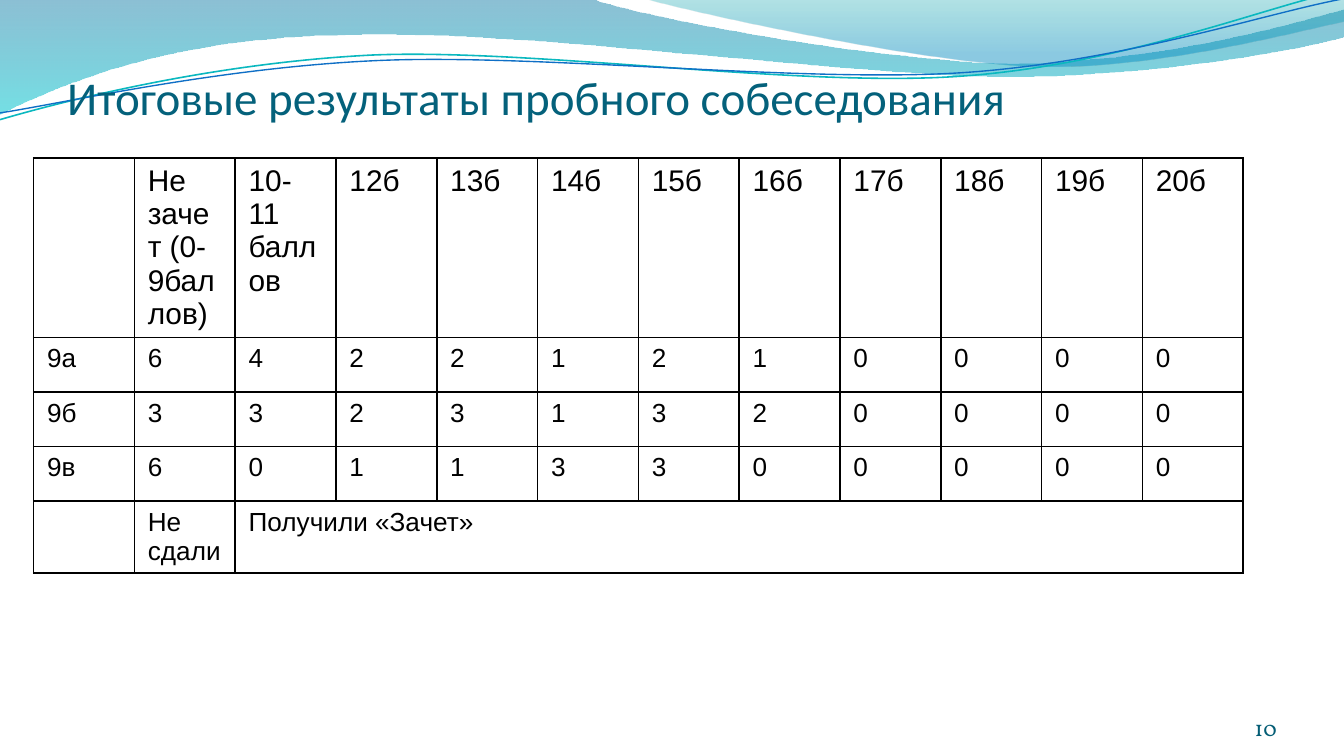
from lxml.etree import SubElement
from pptx import Presentation
from pptx.dml.color import RGBColor
from pptx.enum.text import MSO_ANCHOR as ANCHOR, MSO_AUTO_SIZE as AUTO, PP_ALIGN as ALIGN
from pptx.oxml import parse_xml
from pptx.oxml.ns import nsdecls, qn
from pptx.util import Pt

HEADER = ["", "Не зачет (0-9баллов)", "10-11 баллов"] + [f"{n}б" for n in range(12, 21)]
RESULTS = [
    ["9а", 6, 4, 2, 2, 1, 2, 1, 0, 0, 0, 0],
    ["9б", 3, 3, 2, 3, 1, 3, 2, 0, 0, 0, 0],
    ["9в", 6, 0, 1, 1, 3, 3, 0, 0, 0, 0, 0],
]
FOOTER = ["", "Не сдали", "Получили «Зачет»"] + [""] * 9

# Outlines: a start point, then line ends (x, y) or Bezier curves (two controls, end)
WIDE_WAVE = [
    (0, 0), (316.8, -0.7),
    (342.7, 9.4, 478.1, 33.8, 545.8, 33.8), (614.2, 33.8, 689.8, 13.7, 720, 5),
    (720.7, 19.4),
    (707.8, 23.8, 626.4, 41, 537.1, 41), (447.8, 40.3, 275, 15.1, 185, 18.7),
    (92.9, 19.4, 33.1, 44.6, -0.7, 61.2),
]
RIGHT_WAVE = [
    (344.9, -0.7),
    (366.5, 5.8, 491, 33.1, 553.7, 35.3), (616.3, 37.4, 691.9, 17.3, 720, 11.5),
    (720, 0),
]
TEAL_LINE = [
    (0, 64.1),
    (34.6, 54, 113.8, 33.8, 199.4, 29.5), (285.1, 25.9, 426.2, 46.8, 512.6, 41),
    (599.8, 35.3, 676.1, 4.3, 718.6, -5),
]
BLUE_LINE = [
    (0, 60.5),
    (33.8, 55.4, 118.1, 36, 203.8, 32.4), (290.2, 28.8, 429.8, 44.6, 516.2, 38.9),
    (601.9, 33.1, 677.5, 7.2, 720, -0.7),
]


def rgb(color):
    return RGBColor.from_string(color)


def add_curve(slide, outline, close):
    """Freeform through the segment ends, bent into Bezier curves."""
    ends = [(Pt(seg[-2]), Pt(seg[-1])) for seg in outline]
    builder = slide.shapes.build_freeform(*ends[0])
    builder.add_line_segments(ends[1:], close=close)
    sp = builder.convert_to_shape()
    sp.shadow.inherit = False
    lines = list(sp._element.spPr.iter(qn("a:lnTo")))
    for line, seg in zip(lines, outline[1:]):
        if len(seg) == 2:
            continue
        line.tag = qn("a:cubicBezTo")
        for i in (2, 0):
            pt = parse_xml(f'<a:pt {nsdecls("a")} x="{Pt(seg[i]) - sp.left}" '
                           f'y="{Pt(seg[i + 1]) - sp.top}"/>')
            line.insert(0, pt)
    return sp


def add_wave(slide, outline, stops):
    """Filled wave; each stop is (position, colour, opacity in percent)."""
    sp = add_curve(slide, outline, True)
    sp.line.fill.background()
    sp.fill.gradient()
    sp.fill.gradient_angle = 270
    for stop, (position, color, _) in zip(sp.fill.gradient_stops, stops):
        stop.position = position
        stop.color.rgb = rgb(color)
    for clr, (_, _, opacity) in zip(sp._element.spPr.iter(qn("a:srgbClr")), stops):
        SubElement(clr, qn("a:alpha"), val=str(opacity * 1000))


def add_wave_line(slide, outline, color, width):
    sp = add_curve(slide, outline, False)
    sp.fill.background()
    sp.line.color.rgb = rgb(color)
    sp.line.width = Pt(width)


def add_run(p, text, font, size, color):
    r = p.add_run()
    r.text = text
    r.font.name, r.font.size = font, Pt(size)
    r.font.color.rgb = rgb(color)


def set_frame(tf, top=0):
    tf.word_wrap = True
    tf.auto_size = AUTO.NONE
    tf.vertical_anchor = ANCHOR.BOTTOM
    tf.margin_left = tf.margin_right = tf.margin_bottom = 0
    tf.margin_top = Pt(top)


def place(sp, left, top, width, height):
    sp.left, sp.top, sp.width, sp.height = Pt(left), Pt(top), Pt(width), Pt(height)


def add_title(slide, text):
    sp = slide.shapes.title
    place(sp, 36, 41.8, 648, 25.2)
    set_frame(sp.text_frame, 3.6)
    p = sp.text_frame.paragraphs[0]
    p.alignment = ALIGN.LEFT
    add_run(p, text, "Calibri", 25.2, "04617B")
    slide.shapes._spTree.append(sp._element)  # in front of the waves


def set_borders(cell):
    tc_pr = cell._tc.get_or_add_tcPr()
    for i, side in enumerate(("lnL", "lnR", "lnT", "lnB")):
        tc_pr.insert(i, parse_xml(
            f'<a:{side} {nsdecls("a")} w="{Pt(1)}"><a:solidFill>'
            f'<a:srgbClr val="000000"/></a:solidFill></a:{side}>'))


def add_results(slide, rows):
    n_rows, n_cols = len(rows), len(rows[0])
    col_w, row_h = 54, 29.2
    table = slide.shapes.add_table(n_rows, n_cols, Pt(18), Pt(84.6),
                                   Pt(col_w * n_cols), Pt(row_h * n_rows)).table
    table.first_row = table.horz_banding = False
    for row in table.rows:
        row.height = Pt(row_h)
    for col in table.columns:
        col.width = Pt(col_w)
    for i, values in enumerate(rows):
        for j, value in enumerate(values):
            cell = table.cell(i, j)
            cell.fill.background()
            set_borders(cell)
            if value != "":
                add_run(cell.text_frame.paragraphs[0], str(value), "Arial",
                        14 if i else 16, "000000")
    # The pass label spans every score column
    table.cell(n_rows - 1, 2).merge(table.cell(n_rows - 1, n_cols - 1))


def add_page_number(slide, number):
    tf = slide.shapes.add_textbox(Pt(624), Pt(375.4), Pt(60), Pt(21.6)).text_frame
    set_frame(tf)
    p = tf.paragraphs[0]
    p.alignment = ALIGN.RIGHT
    add_run(p, number, "Vollkorn", 12, "045D75")


def main():
    prs = Presentation()
    prs.slide_width, prs.slide_height = Pt(720), Pt(405)
    s = prs.slides.add_slide(prs.slide_layouts[5])

    # Wave decoration
    add_wave(s, WIDE_WAVE, [(0, "0074A1", 45), (1, "00C6CF", 55)])
    add_wave(s, RIGHT_WAVE, [(0, "00A1A9", 30), (0.8, "008BBF", 45)])
    add_wave_line(s, TEAL_LINE, "0AB8BF", 0.85)
    add_wave_line(s, BLUE_LINE, "0F6FC6", 0.75)

    # Content
    add_title(s, "Итоговые результаты пробного собеседования")
    add_results(s, [HEADER, *RESULTS, FOOTER])
    add_page_number(s, "10")
    prs.save("out.pptx")


if __name__ == "__main__":
    main()
